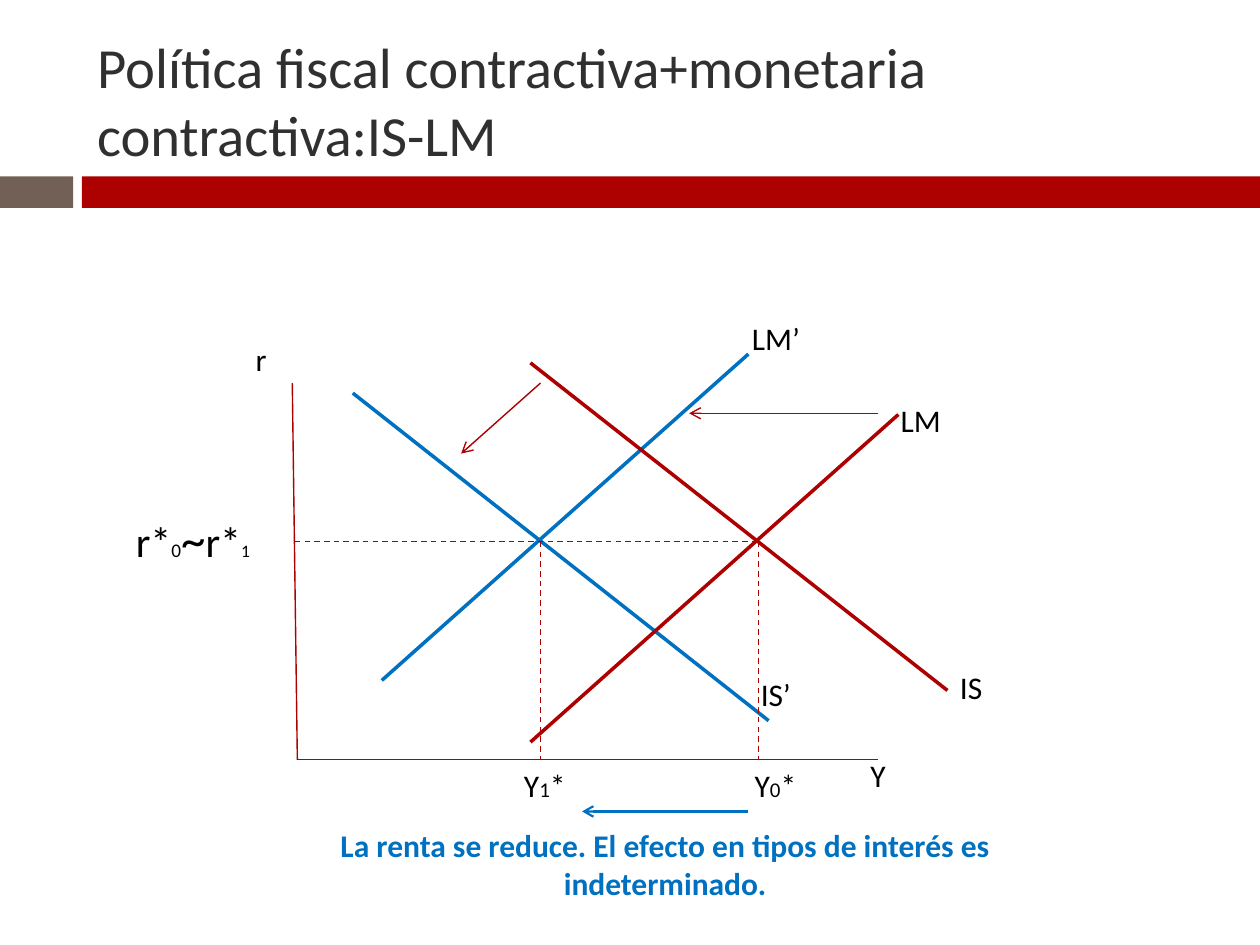
from lxml.etree import SubElement
from pptx import Presentation
from pptx.dml.color import RGBColor
from pptx.enum.dml import MSO_LINE
from pptx.enum.shapes import MSO_CONNECTOR, MSO_SHAPE
from pptx.enum.text import MSO_ANCHOR, MSO_AUTO_SIZE, PP_ALIGN
from pptx.oxml.ns import qn
from pptx.util import Inches, Pt

RED, BLUE, BROWN, GREY, BLACK = "AD0101", "0070C0", "726056", "303030", "000000"
FONT = "Calibri"
THIN, MEDIUM, THICK = 0.79, 1.25, 2

# Content
TITLE = "Política fiscal contractiva+monetaria contractiva:IS-LM"
BANDS = [(0, 0.58, BROWN), (0.65, 9.35, RED)]  # left, width, colour
BAND_TOP, BAND_HEIGHT = 1.4, 0.25

# Key points of the diagram
ORIGIN = (2.36, 6.03)
AXIS_TOP, AXIS_RIGHT = (2.32, 3.04), (6.97, ORIGIN[1])
OLD_INCOME, NEW_INCOME, RATE = 6.02, 4.29, 4.3

# start, end, colour, weight
AXES = [(AXIS_TOP, ORIGIN, RED, THIN), (ORIGIN, AXIS_RIGHT, RED, THIN)]
CURVES = [
    ((3.03, 5.4), (5.94, 2.81), BLUE, THICK),   # LM’
    ((2.8, 3.12), (6.1, 5.72), BLUE, THICK),    # IS’
    ((4.21, 5.89), (7.13, 3.29), RED, THICK),   # LM
    ((4.21, 2.88), (7.52, 5.48), RED, THICK),   # IS
]
GUIDES = [((2.34, RATE), (OLD_INCOME, RATE), RED, THIN)] + [
    ((income, RATE), (income, ORIGIN[1]), RED, THIN)
    for income in (NEW_INCOME, OLD_INCOME)]
ARROWS = [
    ((6.97, 3.28), (5.47, 3.28), RED, THIN),
    ((4.29, 3.04), (3.66, 3.6), RED, THIN),
    ((5.94, 6.44), (4.62, 6.44), BLUE, MEDIUM),
]

# left, top, width, height, runs of (text, size)
LABELS = [
    (5.87, 2.48, 1.34, 0.4, [("LM’", 18)]),
    (7.05, 3.13, 1.34, 0.4, [("LM", 18)]),
    (5.94, 5.31, 1.34, 0.4, [("IS’", 18)]),
    (7.52, 5.25, 0.67, 0.4, [("IS", 18)]),
    (6.81, 5.95, 0.94, 0.4, [("Y", 18)]),
    (1.93, 2.65, 0.94, 0.4, [("r", 18)]),
    (4.06, 6.03, 0.61, 0.4, [("Y", 18), ("1", 12), ("*", 18)]),
    (5.89, 6.03, 0.61, 0.4, [("Y", 18), ("0", 12), ("*", 18)]),
    (0.98, 3.99, 1.5, 0.88,
     [("r*", 24), ("0", 11), ("~", 28), ("r*", 24), ("1", 10)]),
]
CONCLUSION = (2.01, 6.51, 6.54, 0.71, [
    ("La renta se reduce. El efecto en tipos de interés es indeterminado.", 18)])


def rgb(color):
    return RGBColor.from_string(color)


def set_all(target, values):
    for name, value in values.items():
        setattr(target, name, value)


def write_runs(paragraph, runs, color, bold=False):
    for text, size in runs:
        run = paragraph.add_run()
        run.text = text
        set_all(run.font, {"name": FONT, "size": Pt(size), "bold": bold})
        run.font.color.rgb = rgb(color)


def add_band(slide, left, width, color):
    band = slide.shapes.add_shape(
        MSO_SHAPE.RECTANGLE, *map(Inches, (left, BAND_TOP, width, BAND_HEIGHT)))
    band.shadow.inherit = False
    band.fill.solid()
    band.fill.fore_color.rgb = rgb(color)
    band.line.fill.background()


def add_line(slide, start, end, color, weight, dashed=False, arrow=False):
    connector = slide.shapes.add_connector(
        MSO_CONNECTOR.STRAIGHT, *map(Inches, (*start, *end)))
    connector.line.color.rgb = rgb(color)
    connector.line.width = Pt(weight)
    if dashed:
        connector.line.dash_style = MSO_LINE.DASH
    if arrow:
        SubElement(connector.line._get_or_add_ln(), qn("a:tailEnd"), type="arrow")
    SubElement(connector._element.spPr, qn("a:effectLst"))


def add_text(slide, left, top, width, height, runs, color=BLACK, bold=False,
             align=PP_ALIGN.LEFT):
    box = slide.shapes.add_textbox(*map(Inches, (left, top, width, height)))
    set_all(box.text_frame, {
        "word_wrap": True, "auto_size": MSO_AUTO_SIZE.SHAPE_TO_FIT_TEXT})
    paragraph = box.text_frame.paragraphs[0]
    paragraph.alignment = align
    write_runs(paragraph, runs, color, bold)


def main():
    presentation = Presentation()
    set_all(presentation, {"slide_width": Inches(10), "slide_height": Inches(7.5)})
    slide = presentation.slides.add_slide(presentation.slide_layouts[5])

    # Title and the bands below it
    title = slide.shapes.title
    set_all(title, {"left": Inches(0.67), "top": Inches(0.25),
                    "width": Inches(8.92), "height": Inches(1.08)})
    set_all(title.text_frame, {
        "word_wrap": True, "auto_size": MSO_AUTO_SIZE.NONE,
        "vertical_anchor": MSO_ANCHOR.MIDDLE})
    paragraph = title.text_frame.paragraphs[0]
    paragraph.alignment = PP_ALIGN.LEFT
    write_runs(paragraph, [(TITLE, 32.4)], GREY)
    for band in BANDS:
        add_band(slide, *band)

    # Diagram
    for line in AXES + CURVES:
        add_line(slide, *line)
    for line in GUIDES:
        add_line(slide, *line, dashed=True)
    for line in ARROWS:
        add_line(slide, *line, arrow=True)

    # Labels and conclusion
    for label in LABELS:
        add_text(slide, *label)
    add_text(slide, *CONCLUSION, color=BLUE, bold=True, align=PP_ALIGN.CENTER)

    presentation.save("out.pptx")


if __name__ == "__main__":
    main()
